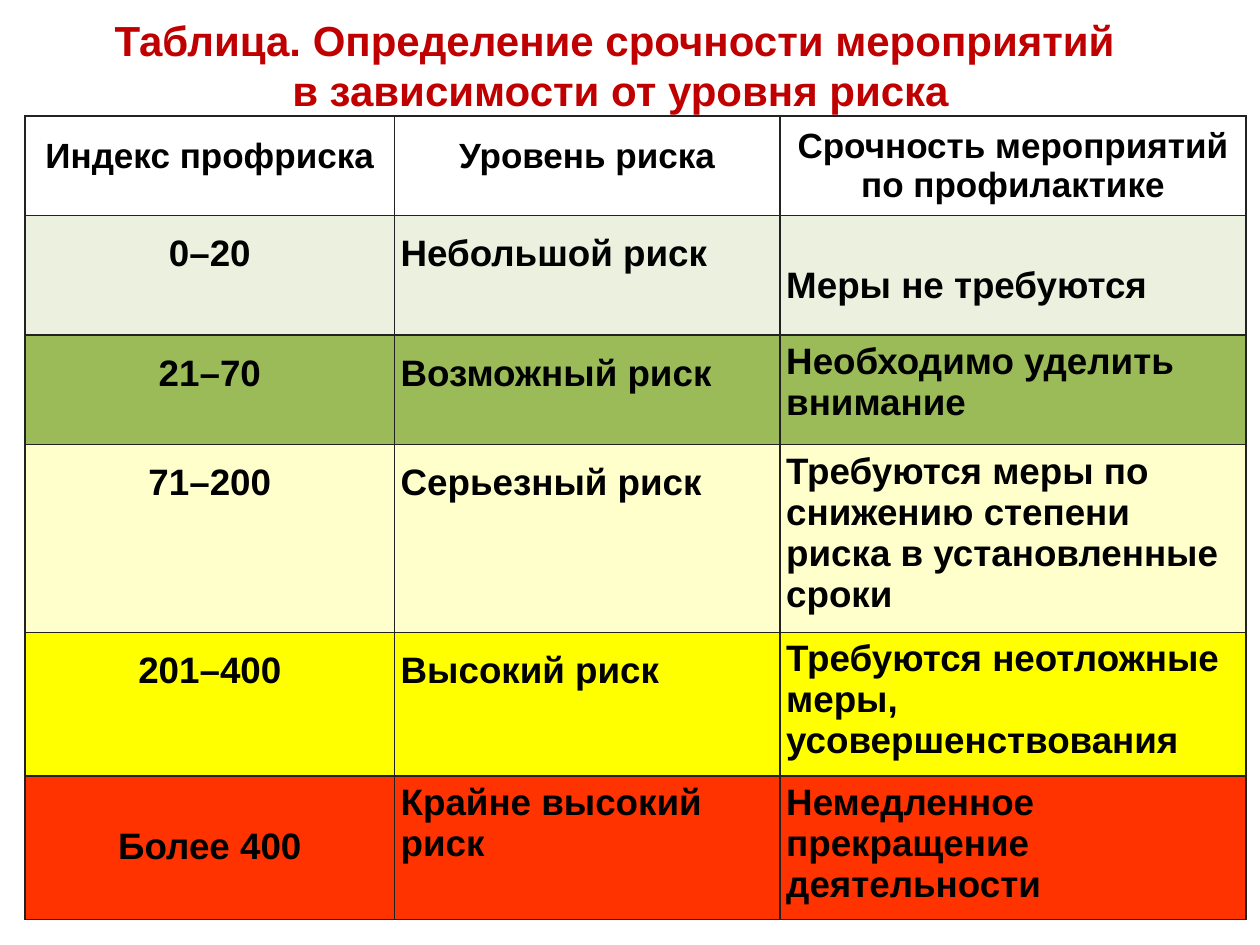
from lxml.etree import SubElement
from pptx import Presentation
from pptx.dml.color import RGBColor
from pptx.enum.text import MSO_ANCHOR, MSO_AUTO_SIZE, PP_ALIGN
from pptx.oxml.ns import qn
from pptx.util import Inches, Pt

BLACK = RGBColor(0x00, 0x00, 0x00)
BORDER = RGBColor(0x22, 0x22, 0x22)
TITLE_RED = RGBColor(0xC0, 0x00, 0x00)
PALE_GREEN = RGBColor(0xEB, 0xF1, 0xDE)
GREEN = RGBColor(0x9B, 0xBB, 0x59)
CREAM = RGBColor(0xFF, 0xFF, 0xCC)
YELLOW = RGBColor(0xFF, 0xFF, 0x00)
RED = RGBColor(0xFF, 0x33, 0x00)

FONT = "Arial"
CELL_INSET = 0.05
TIGHT_LINE = Pt(11.6)
SPACE_AFTER = Pt(6.8)
DROP_STEP = 0.256

TITLE_LINES = [
    "Таблица. Определение срочности мероприятий ",
    "в зависимости от уровня риска",
]
HEADERS = ["Индекс профриска", "Уровень риска", "Срочность мероприятий по профилактике"]
COLUMN_WIDTHS = [2.93, 3.06, 3.7]
HEADER_HEIGHT = 0.79
RISK_LEVELS = [
    (PALE_GREEN, 0.95, (1, 1, 2), ("0–20", "Небольшой риск", "Меры не требуются")),
    (GREEN, 0.87, (1, 1, 0), ("21–70", "Возможный риск", "Необходимо уделить внимание")),
    (CREAM, 1.49, (1, 1, 0), ("71–200", "Серьезный риск",
                              "Требуются меры по снижению степени риска в установленные сроки")),
    (YELLOW, 1.14, (1, 1, 0), ("201–400", "Высокий риск",
                               "Требуются неотложные меры, усовершенствования")),
    (RED, 1.14, (2, 0, 0), ("Более 400", "Крайне высокий риск",
                            "Немедленное прекращение деятельности")),
]


def add_span(para, text, size, color):
    span = para.add_run()
    span.text = text
    span.font.name = FONT
    span.font.size = Pt(size)
    span.font.bold = True
    span.font.color.rgb = color


def add_borders(cell):
    properties = cell._tc.get_or_add_tcPr()
    for position, side in enumerate(("lnL", "lnR", "lnT", "lnB")):
        line = SubElement(properties, qn(f"a:{side}"), w=str(Pt(1)))
        fill = SubElement(line, qn("a:solidFill"))
        SubElement(fill, qn("a:srgbClr"), val=str(BORDER))
        properties.insert(position, line)


def fill_cell(cell, text, size, align, tight, drop=0, color=None):
    cell.margin_left = cell.margin_right = cell.margin_bottom = Inches(CELL_INSET)
    cell.margin_top = Inches(CELL_INSET + drop * DROP_STEP)
    if color is None:
        cell.fill.background()
    else:
        cell.fill.solid()
        cell.fill.fore_color.rgb = color
    add_borders(cell)
    para = cell.text_frame.paragraphs[0]
    para.alignment = align
    para.space_after = SPACE_AFTER
    if tight:
        para.line_spacing = TIGHT_LINE
    add_span(para, text, size, BLACK)


def add_title(page, left, top, width, height):
    title = page.shapes.title
    title.left, title.top, title.width, title.height = map(Inches, (left, top, width, height))
    frame = title.text_frame
    frame.word_wrap = True
    frame.auto_size = MSO_AUTO_SIZE.NONE
    frame.vertical_anchor = MSO_ANCHOR.MIDDLE
    for index, text in enumerate(TITLE_LINES):
        para = frame.add_paragraph() if index else frame.paragraphs[0]
        para.alignment = PP_ALIGN.CENTER
        add_span(para, text, 24, TITLE_RED)


def add_risk_table(page, left, top):
    heights = [HEADER_HEIGHT] + [level[1] for level in RISK_LEVELS]
    box = map(Inches, (left, top, sum(COLUMN_WIDTHS), sum(heights)))
    table = page.shapes.add_table(len(heights), len(COLUMN_WIDTHS), *box).table
    table.first_row = table.horz_banding = False
    for column, width in zip(table.columns, COLUMN_WIDTHS):
        column.width = Inches(width)
    for row, height in zip(table.rows, heights):
        row.height = Inches(height)
    for column, text in enumerate(HEADERS):
        cell = table.cell(0, column)
        cell.vertical_anchor = MSO_ANCHOR.MIDDLE
        fill_cell(cell, text, 20, PP_ALIGN.CENTER, tight=column < 2)
    for row, (color, _, drops, texts) in enumerate(RISK_LEVELS, start=1):
        for column, (text, drop) in enumerate(zip(texts, drops)):
            align = PP_ALIGN.LEFT if column else PP_ALIGN.CENTER
            fill_cell(table.cell(row, column), text, 21, align, drop > 0, drop, color)


def main():
    deck = Presentation()
    deck.slide_width, deck.slide_height = Inches(10), Inches(7.5)
    page = deck.slides.add_slide(deck.slide_layouts[5])
    add_risk_table(page, 0.2, 0.92)
    add_title(page, 0.2, 0.06, 9.45, 0.91)
    deck.save("out.pptx")


if __name__ == "__main__":
    main()
